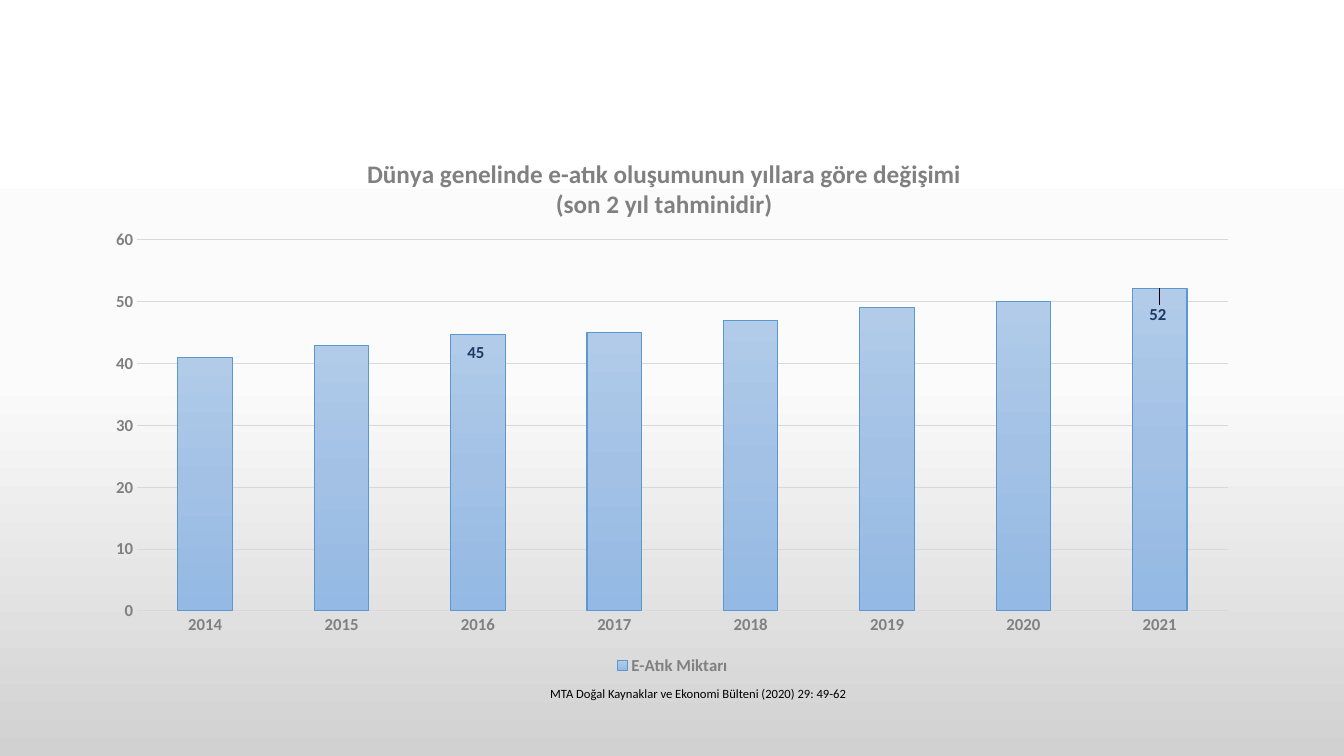
from pptx import Presentation
from pptx.chart.data import CategoryChartData
from pptx.dml.color import RGBColor
from pptx.enum.chart import XL_CHART_TYPE, XL_LABEL_POSITION, XL_LEGEND_POSITION, XL_TICK_MARK
from pptx.enum.text import MSO_AUTO_SIZE, PP_ALIGN
from pptx.oxml import parse_xml
from pptx.oxml.ns import nsdecls
from pptx.util import Emu, Pt

COLUMN = XL_CHART_TYPE.COLUMN_CLUSTERED
OUT_END = XL_LABEL_POSITION.OUTSIDE_END
BOTTOM = XL_LEGEND_POSITION.BOTTOM
NO_TICK = XL_TICK_MARK.NONE
GROW = MSO_AUTO_SIZE.SHAPE_TO_FIT_TEXT
CENTER = PP_ALIGN.CENTER

BLACK = RGBColor(0x00, 0x00, 0x00)
GRAY = RGBColor(0x80, 0x80, 0x80)
GRID = RGBColor(0xD9, 0xD9, 0xD9)
EDGE = RGBColor(0x59, 0x98, 0xD0)
NAVY = RGBColor(0x1F, 0x38, 0x64)
PAGE = [RGBColor(0xFF, 0xFF, 0xFF), RGBColor(0xFB, 0xFB, 0xFB), RGBColor(0xD1, 0xD1, 0xD1)]
BARS = [RGBColor(0xB1, 0xCB, 0xE9), RGBColor(0xA3, 0xC1, 0xE5), RGBColor(0x93, 0xB9, 0xE4)]

FONT = "Calibri"
PX = 914400 / 100.8
WIDE, HIGH = 1159, 548


def shade(solid, colors):
    """Swap a solid fill for an even, top-to-bottom gradient."""
    step = 100000 // (len(colors) - 1)
    stops = "".join(f'<a:gs pos="{i * step}"><a:srgbClr val="{c}"/></a:gs>'
                    for i, c in enumerate(colors))
    solid.getparent().replace(solid, parse_xml(
        f'<a:gradFill {nsdecls("a")} rotWithShape="1"><a:gsLst>{stops}</a:gsLst>'
        '<a:lin ang="5400000" scaled="0"/></a:gradFill>'))


def place(part, index, modes, **spots):
    """Give a chart part a manual layout, in px of the chart."""
    for old in part.xpath("c:layout"):
        part.remove(old)
    parts = "".join(f'<c:{k} val="{v / (WIDE if k in "xw" else HIGH):.4f}"/>'
                    for k, v in spots.items())
    part.insert(index, parse_xml(
        f'<c:layout {nsdecls("c")}><c:manualLayout>{modes}{parts}'
        '</c:manualLayout></c:layout>'))


prs = Presentation()
prs.slide_width, prs.slide_height = Emu(round(1344 * PX)), Emu(round(756 * PX))
slide = prs.slides.add_slide(prs.slide_layouts[6])

# Background
slide.background.fill.solid()
slide.background.fill.fore_color.rgb = PAGE[0]
shade(slide.element.xpath(".//p:bgPr/a:solidFill")[0], PAGE)

# Chart
data = CategoryChartData()
data.categories = [str(year) for year in range(2014, 2022)]
data.add_series("E-Atık Miktarı", [41, 43, 44.7, 45, 47, 49, 50, 52.2])
box = [Emu(round(n * PX)) for n in (93, 132, WIDE, HIGH)]
chart = slide.shapes.add_chart(COLUMN, *box, data).chart
chart.font.name, chart.font.size = FONT, Pt(10)
chart.font.color.rgb = BLACK
edges = '<c:xMode val="edge"/><c:yMode val="edge"/>'
root = chart.element
place(root.xpath(".//c:plotArea")[0], 0, '<c:layoutTarget val="inner"/>' + edges,
      x=44, y=108, w=1091, h=371)

# Title
chart.has_title = True
frame = chart.chart_title.text_frame
lines = ["Dünya genelinde e-atık oluşumunun yıllara göre değişimi", "(son 2 yıl tahminidir)"]
for i, line in enumerate(lines):
    para = frame.add_paragraph() if i else frame.paragraphs[0]
    para.alignment = CENTER
    run = para.add_run()
    run.text = line
    run.font.name, run.font.size, run.font.bold = FONT, Pt(18), True
    run.font.color.rgb = GRAY
chart.chart_title.include_in_layout = False
place(root.xpath(".//c:chart/c:title")[0], 1, edges, x=271, y=22)

# Axes and legend
chart.has_legend = True
chart.legend.position = BOTTOM
chart.legend.include_in_layout = False
years, amount = chart.category_axis, chart.value_axis
for axis in (years, amount):
    axis.major_tick_mark = axis.minor_tick_mark = NO_TICK
    axis.format.line.fill.background()
for font in (years.tick_labels.font, amount.tick_labels.font, chart.legend.font):
    font.name, font.size, font.bold = FONT, Pt(12), True
    font.color.rgb = GRAY
amount.minimum_scale, amount.maximum_scale, amount.major_unit = 0, 60, 10
amount.has_major_gridlines = True
amount.major_gridlines.format.line.color.rgb = GRID
amount.major_gridlines.format.line.width = Pt(0.75)

# Bars
plot = chart.plots[0]
plot.gap_width, plot.vary_by_categories = 150, False
bars = plot.series[0]
bars.format.fill.solid()
bars.format.fill.fore_color.rgb = BARS[0]
shade(root.xpath(".//c:ser/c:spPr/a:solidFill")[0], BARS)
bars.format.line.color.rgb = EDGE
bars.format.line.width = Pt(0.75)

# Labels moved down into two bars
bars.data_labels.show_value = False
for index, drop in ((2, 32), (7, 40)):
    label = bars.points[index].data_label
    label.font.name, label.font.size, label.font.bold = FONT, Pt(12), True
    label.font.color.rgb = NAVY
    label.position = OUT_END
    node = root.xpath(f".//c:dLbl[c:idx/@val='{index}']")[0]
    place(node, 1, "", x=-2, y=drop)
    node.insert(2, parse_xml(
        f'<c:numFmt {nsdecls("c")} formatCode="0" sourceLinked="0"/>'))

# Source line
box = [Emu(round(n * PX)) for n in (355, 681, 686, 25)]
frame = slide.shapes.add_textbox(*box).text_frame
frame.word_wrap, frame.auto_size = True, GROW
para = frame.paragraphs[0]
para.alignment = CENTER
run = para.add_run()
run.text = "MTA Doğal Kaynaklar ve Ekonomi Bülteni (2020) 29: 49-62"
run.font.name, run.font.size = FONT, Pt(9)
run.font.color.rgb = BLACK

prs.save("out.pptx")
